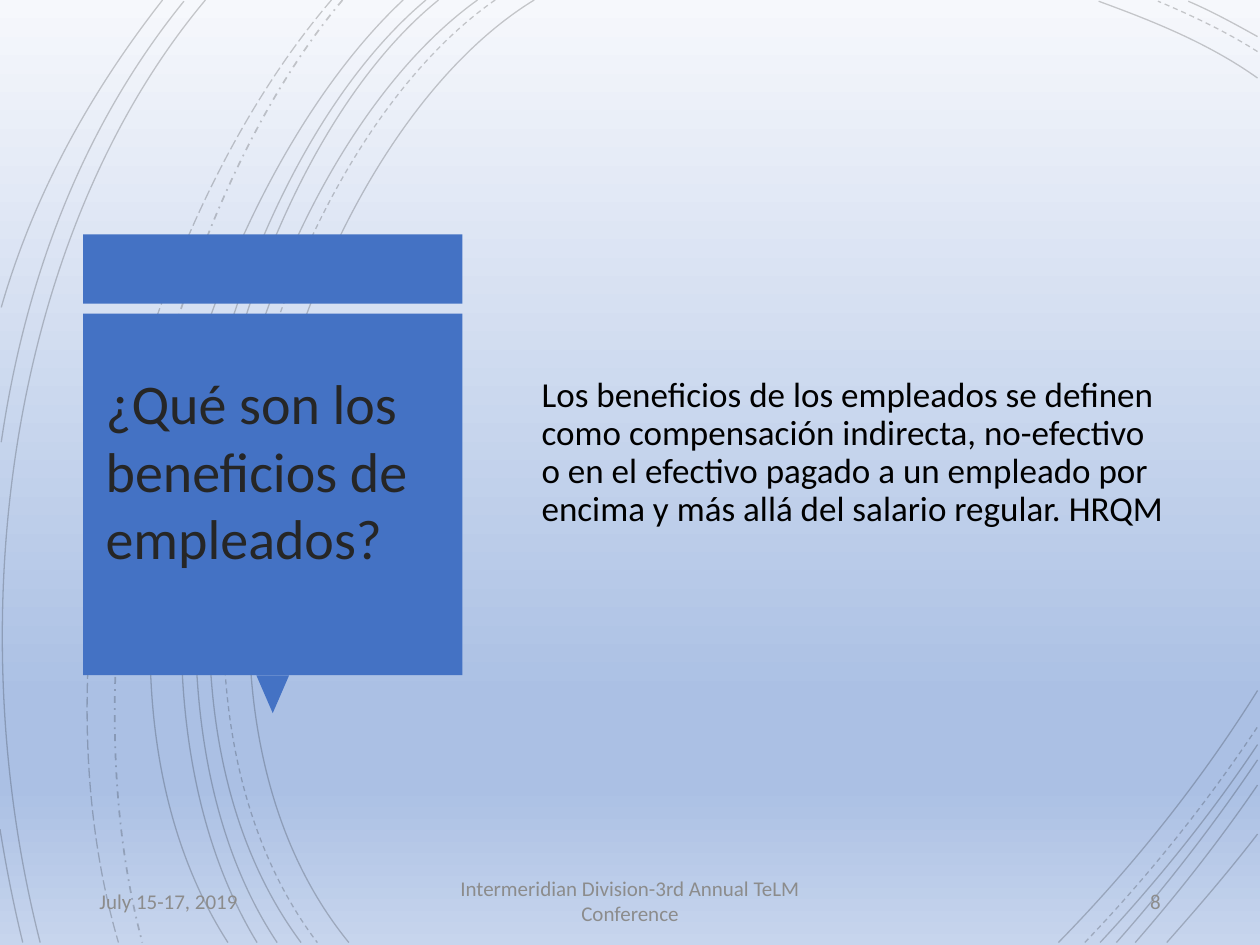
from dataclasses import dataclass

from lxml import etree
from pptx import Presentation
from pptx.dml.color import RGBColor
from pptx.enum import dml, shapes, text
from pptx.oxml.ns import qn
from pptx.util import Pt


@dataclass(frozen=True)
class Theme:
    font: str = "Calibri"
    accent: str = "4472C4"
    title: str = "262626"
    ink: str = "000000"
    muted: str = "8C8C8C"
    sky: tuple = ((0, "F6F8FC"), (74, "ABC0E4"), (83, "ABC0E4"), (100, "C7D5ED"))
    big: int = 32
    mid: int = 20
    small: int = 12
    alpha: int = 20


THEME = Theme()
DASH = dml.MSO_LINE
ALIGN = text.PP_ALIGN

# Tall arcs: top x, first control, second control, foot x, dash, width
TALL = [
    (305.3, (169.9, 82.8), (77, 388.8), 199.4, DASH.SOLID, 0.75),
    (283, (153.4, 90), (66.2, 386.6), 181.4, DASH.DASH, 0.75),
    (272.9, (145.4, 91.4), (59, 386.6), 172.1, DASH.SOLID, 0.75),
    (250.6, (131.8, 95.8), (59, 389.5), 158.4, DASH.SOLID, 0.75),
    (243.4, (124.6, 99.4), (52.6, 383.8), 146.9, DASH.SOLID, 0.75),
    (230.4, (117.4, 105.8), (28.8, 380.9), 130.3, DASH.SOLID, 0.75),
    (195.8, (95, 119.5), (35.3, 366.5), 81.4, DASH.DASH_DOT, 1),
    (189.4, (85, 121.7), (15.1, 359.3), 67.7, DASH.LONG_DASH, 0.75),
    (117.4, (5.8, 133.2), (-24.5, 352.8), 23, DASH.SOLID, 0.75),
]
# Lower right arcs: foot x, two controls, y at the right edge, dash
LOW = [
    (604.8, (645.8, 496.8), (685.4, 447.8), 394.6, DASH.SOLID),
    (619.9, (654.5, 502.6), (688.3, 460.8), 415.4, DASH.DASH),
    (628.6, (660.2, 504.7), (691.2, 466.6), 425.5, DASH.SOLID),
    (637.9, (666, 506.9), (693.4, 471.6), 434.2, DASH.SOLID),
    (648.7, (673.2, 510.5), (697, 480.2), 448.6, DASH.SOLID),
    (666.7, (684, 519.1), (702, 498.2), 476.6, DASH.SOLID),
]
# Upper right arcs: y at the right edge, two controls, top x, dash
HIGH = [
    (44.6, (690.5, 24.5), (657.4, 11.5), 627.8, DASH.SOLID),
    (29.5, (700.6, 18), (680.4, 8.6), 661.7, DASH.DASH),
    (20.9, (705.6, 13.7), (692.6, 6.5), 679, DASH.SOLID),
]
LEFT = [
    ((105.1, 0.7), (49.7, 69.1), (15.1, 154.1), (0.7, 252.7)),
    ((0, 473.8), (3.6, 496.1), (7.9, 517.7), (13, 538.6)),
    ((92.9, 0), (54, 49.7), (20.2, 108), (0.7, 175.7)),
]


def paint_back(slide):
    fill = slide.background.fill
    fill.gradient()
    fill.gradient_angle = 270
    stops = slide.element.find(".//" + qn("a:gsLst"))
    for old in list(stops):
        stops.remove(old)
    for pos, tone in THEME.sky:
        stop = etree.SubElement(stops, qn("a:gs"), pos=str(pos * 1000))
        etree.SubElement(stop, qn("a:srgbClr"), val=tone)


def add_curve(slide, box, points, dash=DASH.SOLID, width=0.75):
    """Draw one cubic curve from its four points."""
    left, top = box[:2]
    start, *rest = [(Pt(left + x), Pt(top + y)) for x, y in points]
    pen = slide.shapes.build_freeform(*start)
    pen.add_line_segments(rest, close=False)
    curve = pen.convert_to_shape()
    curve.shadow.inherit = False
    curve.fill.background()
    curve.line.color.rgb = RGBColor.from_string(THEME.ink)
    curve.line.width = Pt(width)
    curve.line.dash_style = dash
    tone = curve.element.find(".//" + qn("a:ln")).find(".//" + qn("a:srgbClr"))
    etree.SubElement(tone, qn("a:alpha"), val=str(THEME.alpha * 1000))
    track = curve.element.find(".//" + qn("a:path"))
    bend = etree.SubElement(track, qn("a:cubicBezTo"))
    for step in track.findall(qn("a:lnTo")):
        bend.append(step[0])
        track.remove(step)


def draw_arcs(slide, box):
    edge, foot = box[2] - 1.4, box[3] - 1.4
    for head, one, two, end, dash, width in TALL:
        add_curve(slide, box, [(head, 0), one, two, (end, foot)], dash, width)
    for start, one, two, rise, dash in LOW:
        add_curve(slide, box, [(start, foot), one, two, (edge, rise)], dash)
    for drop, one, two, end, dash in HIGH:
        add_curve(slide, box, [(edge, drop), one, two, (end, 0.7)], dash)
    for points in LEFT:
        add_curve(slide, box, points)


def add_block(slide, kind, box, turn=0):
    block = slide.shapes.add_shape(kind, *map(Pt, box))
    block.shadow.inherit = False
    block.fill.solid()
    block.fill.fore_color.rgb = RGBColor.from_string(THEME.accent)
    block.line.fill.background()
    block.rotation = turn


def add_words(slide, box, words, size, tone, align=ALIGN.LEFT, pitch=1.0, lift=0):
    """Add middle-anchored text; lift is extra room below it."""
    frame = slide.shapes.add_textbox(*map(Pt, box)).text_frame
    frame.word_wrap = True
    frame.vertical_anchor = text.MSO_ANCHOR.MIDDLE
    frame.margin_bottom = Pt(3.6 + lift)
    para = frame.paragraphs[0]
    para.alignment = align
    para.line_spacing = pitch
    run = para.add_run()
    run.text = words
    run.font.name = THEME.font
    run.font.size = Pt(size)
    run.font.color.rgb = RGBColor.from_string(tone)


def draw_card(slide, box):
    left, top, wide, high = box
    bar, gap, tip = 39.6, 5.8, 18.7
    body = high - bar - gap
    low = top + bar + gap
    rect = shapes.MSO_SHAPE.RECTANGLE
    add_block(slide, rect, (left, top, wide, bar))
    add_block(slide, shapes.MSO_SHAPE.ISOSCELES_TRIANGLE,
              (left + (wide - tip) / 2, top + high, tip, 21.6), 180)
    add_block(slide, rect, (left, low, wide, body))
    add_words(slide, (left + 5.8, low + 10.8, wide - 13, body - 18),
              "¿Qué son los beneficios de empleados?",
              THEME.big, THEME.title, lift=32)


def draw_body(slide, box):
    add_words(slide, box,
              "Los beneficios de los empleados se definen como compensación "
              "indirecta, no-efectivo o en el efectivo pagado a un empleado por "
              "encima y más allá del salario regular. HRQM",
              THEME.mid, THEME.ink, pitch=0.9, lift=22)


def draw_foot(slide, box):
    left, top, wide, high = box
    side, mid = 162, 243.4
    parts = [
        (0, side, "July 15-17, 2019", ALIGN.LEFT),
        ((wide - mid) / 2, mid,
         "Intermeridian Division-3rd Annual TeLM Conference", ALIGN.CENTER),
        (wide - side, side, "8", ALIGN.RIGHT),
    ]
    for shift, span, words, align in parts:
        add_words(slide, (left + shift, top, span, high), words,
                  THEME.small, THEME.muted, align)


def main():
    deck = Presentation()
    deck.slide_width, deck.slide_height = Pt(720), Pt(540)
    slide = deck.slides.add_slide(deck.slide_layouts[6])
    paint_back(slide)
    draw_arcs(slide, (0, 0, 720, 540))
    draw_card(slide, (47.5, 133.9, 216.7, 252))
    draw_body(slide, (302.4, 63.4, 370.8, 413.3))
    draw_foot(slide, (49.7, 500.4, 620.6, 28.8))
    deck.save("out.pptx")


if __name__ == "__main__":
    main()
